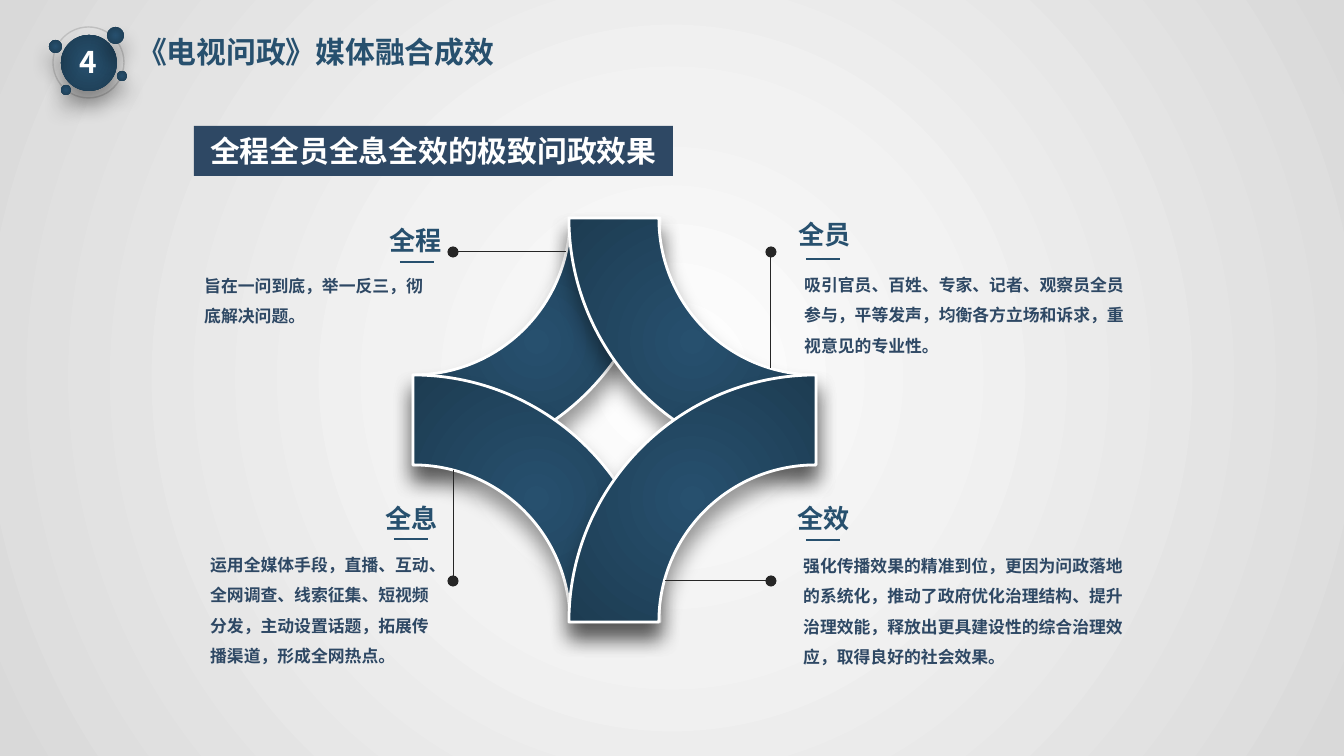
from dataclasses import dataclass

from lxml.etree import SubElement
from pptx import Presentation
from pptx.dml.color import RGBColor
from pptx.enum.shapes import MSO_CONNECTOR, MSO_SHAPE
from pptx.enum.text import MSO_AUTO_SIZE, PP_ALIGN
from pptx.oxml import parse_xml
from pptx.oxml.ns import nsdecls, qn
from pptx.util import Pt

EMU_PER_PX = 914400 / 134.4
ARC_CONTROL = 0.5523  # control distance of a quarter circle of radius 1


@dataclass(frozen=True)
class Theme:
    font: str = "Noto Sans CJK SC"
    heading: str = "27506E"
    body: str = "2E4864"
    white: str = "FFFFFF"
    ring: str = "BFBFBF"
    leader: str = "262626"
    blue_stops: tuple = ((0, "27506E"), (100, "1D3C52"))
    page_stops: tuple = ((0, "FFFFFF"), (35, "F2F2F2"), (100, "D9D9D9"))
    title_size: int = 16
    label_size: int = 14
    body_size: int = 9


THEME = Theme()

# Label box, underline (left, right, y), body box, label, body text
TOPICS = [
    ((376, 218, 79, 46), (400, 434, 262), (191, 259, 261, 71), "全程",
     "旨在一问到底，举一反三，彻底解决问题。"),
    ((785, 212, 79, 46), (806, 840, 259), (791, 258, 348, 105), "全员",
     "吸引官员、百姓、专家、记者、观察员全员参与，平等发声，均衡各方立场和诉求，重视意见的专业性。"),
    ((372, 496, 79, 46), (394, 428, 539), (197, 538, 254, 136), "全息",
     "运用全媒体手段，直播、互动、全网调查、线索征集、短视频分发，主动设置话题，拓展传播渠道，形成全网热点。"),
    ((784, 496, 79, 46), (806, 840, 540), (790, 539, 348, 136), "全效",
     "强化传播效果的精准到位，更因为问政落地的系统化，推动了政府优化治理结构、提升治理效能，释放出更具建设性的综合治理效应，取得良好的社会效果。"),
]
LEADERS = [
    (566, 252, 453, 252),
    (453, 470, 453, 581),
    (665, 581, 771, 581),
    (771, 368, 771, 252),
]
BADGE_DISCS = [
    (61, 35, 56), (107, 27, 17), (49, 40, 13), (61, 85, 10), (117, 71, 10),
]
STAR_LEFT, STAR_TOP, STAR_RIGHT, STAR_BOTTOM = 413, 218, 816, 622
OUTER_RADIUS, INNER_RADIUS = 247, 157


def px(*lengths):
    return [round(length * EMU_PER_PX) for length in lengths]


def color(value):
    return RGBColor.from_string(value)


def fill_radial(fill, element, stops):
    """Fill with a circular gradient that spreads from the centre."""
    fill.gradient()
    gradient = next(element.iter(qn("a:gradFill")))
    stop_xml = "".join(
        f'<a:gs pos="{position * 1000}"><a:srgbClr val="{value}"/></a:gs>'
        for position, value in stops)
    gradient.getparent().replace(gradient, parse_xml(
        f'<a:gradFill {nsdecls("a")} rotWithShape="1"><a:gsLst>{stop_xml}</a:gsLst>'
        '<a:path path="circle"><a:fillToRect l="50000" t="50000" r="50000" b="50000"/>'
        '</a:path></a:gradFill>'))


def style_raised(shape):
    """Give a shape the blue gradient and a soft shadow below it."""
    fill_radial(shape.fill, shape.element, THEME.blue_stops)
    shape.shadow.inherit = False
    effects = shape.element.spPr.find(qn("a:effectLst"))
    effects.append(parse_xml(
        f'<a:outerShdw {nsdecls("a")} blurRad="{Pt(11)}" dist="{Pt(8)}" dir="5400000" '
        'algn="t" rotWithShape="0"><a:srgbClr val="000000"><a:alpha val="40000"/>'
        '</a:srgbClr></a:outerShdw>'))


def write_text(shape, text, size, text_color, align=PP_ALIGN.LEFT, wrap=False, spacing=None):
    frame = shape.text_frame
    frame.text = text
    frame.word_wrap = wrap
    frame.auto_size = MSO_AUTO_SIZE.SHAPE_TO_FIT_TEXT
    paragraph = frame.paragraphs[0]
    paragraph.alignment = align
    if spacing:
        paragraph.line_spacing = spacing
    font = paragraph.runs[0].font
    font.name = THEME.font
    font.size = Pt(size)
    font.bold = True
    font.color.rgb = color(text_color)
    for properties in shape.element.iter(qn("a:rPr")):
        SubElement(properties, qn("a:ea")).set("typeface", THEME.font)


def add_text(slide, box, text, size, text_color, **layout):
    write_text(slide.shapes.add_textbox(*px(*box)), text, size, text_color, **layout)


def add_line(slide, ends, line_color, width, dot=False):
    connector = slide.shapes.add_connector(MSO_CONNECTOR.STRAIGHT, *px(*ends))
    connector.line.color.rgb = color(line_color)
    connector.line.width = Pt(width)
    properties = connector.element.spPr
    if dot:
        SubElement(properties.find(qn("a:ln")), qn("a:tailEnd")).set("type", "oval")
    SubElement(properties, qn("a:effectLst"))


def add_banner(slide, box, text):
    banner = slide.shapes.add_shape(MSO_SHAPE.RECTANGLE, *px(*box))
    banner.shadow.inherit = False
    banner.fill.solid()
    banner.fill.fore_color.rgb = color(THEME.body)
    banner.line.fill.background()
    write_text(banner, text, THEME.title_size, THEME.white, align=PP_ALIGN.CENTER)


def add_badge(slide, number):
    shapes = slide.shapes.add_group_shape().shapes
    ring = shapes.add_shape(MSO_SHAPE.OVAL, *px(53, 27, 71, 71))
    ring.shadow.inherit = False
    ring.fill.background()
    ring.line.color.rgb = color(THEME.ring)
    ring.line.width = Pt(0.75)
    for left, top, diameter in BADGE_DISCS:
        disc = shapes.add_shape(MSO_SHAPE.OVAL, *px(left, top, diameter, diameter))
        disc.line.fill.background()
        style_raised(disc)
    add_text(slide, (66, 37, 45, 50), number, THEME.title_size, THEME.white)


def curve_to(points):
    point_xml = "".join(f'<a:pt x="{round(x)}" y="{round(y)}"/>' for x, y in points)
    return parse_xml(f'<a:cubicBezTo {nsdecls("a")}>{point_xml}</a:cubicBezTo>')


def add_star_band(slide, center_x, center_y, toward_x, toward_y):
    """Add a quarter ring; toward_x and toward_y (1 or -1) point into the star."""
    left = min(center_x, center_x + toward_x * OUTER_RADIUS)
    top = min(center_y, center_y + toward_y * OUTER_RADIUS)

    def at(radius, across, down):
        return (center_x + toward_x * radius * across,
                center_y + toward_y * radius * down)

    def arc(radius):
        steps = ((0, 1), (ARC_CONTROL, 1), (1, ARC_CONTROL), (1, 0))
        return [(x - left, y - top) for x, y in (at(radius, *step) for step in steps)]

    builder = slide.shapes.build_freeform(*at(INNER_RADIUS, 0, 1), scale=EMU_PER_PX)
    builder.add_line_segments([
        at(OUTER_RADIUS, 0, 1), at(OUTER_RADIUS, 1, 0),
        at(INNER_RADIUS, 1, 0), at(INNER_RADIUS, 0, 1)])
    band = builder.convert_to_shape()
    edges = list(band.element.iter(qn("a:lnTo")))
    for edge, points in ((edges[1], arc(OUTER_RADIUS)), (edges[3], arc(INNER_RADIUS)[::-1])):
        edge.getparent().replace(edge, curve_to(points[1:]))
    band.line.color.rgb = color(THEME.white)
    band.line.width = Pt(1.5)
    style_raised(band)


def add_topic(slide, label_box, underline, body_box, label, body):
    left, right, y = underline
    add_text(slide, label_box, label, THEME.label_size, THEME.heading, align=PP_ALIGN.CENTER)
    add_line(slide, (left, y, right, y), THEME.heading, 1.5)
    add_text(slide, body_box, body, THEME.body_size, THEME.body, wrap=True, spacing=1.5)


def main():
    presentation = Presentation()
    presentation.slide_width, presentation.slide_height = px(1344, 756)
    slide = presentation.slides.add_slide(presentation.slide_layouts[6])
    fill_radial(slide.background.fill, slide.element, THEME.page_stops)

    add_banner(slide, (194, 126, 479, 50), "全程全员全息全效的极致问政效果")
    add_text(slide, (124, 27, 386, 50), "《电视问政》媒体融合成效", THEME.title_size, THEME.heading)
    add_badge(slide, "4")
    for center_x, toward_x in ((STAR_LEFT, 1), (STAR_RIGHT, -1)):
        for center_y, toward_y in ((STAR_TOP, 1), (STAR_BOTTOM, -1)):
            add_star_band(slide, center_x, center_y, toward_x, toward_y)
    for ends in LEADERS:
        add_line(slide, ends, THEME.leader, 0.5, dot=True)
    for topic in TOPICS:
        add_topic(slide, *topic)

    presentation.save("out.pptx")


if __name__ == "__main__":
    main()
